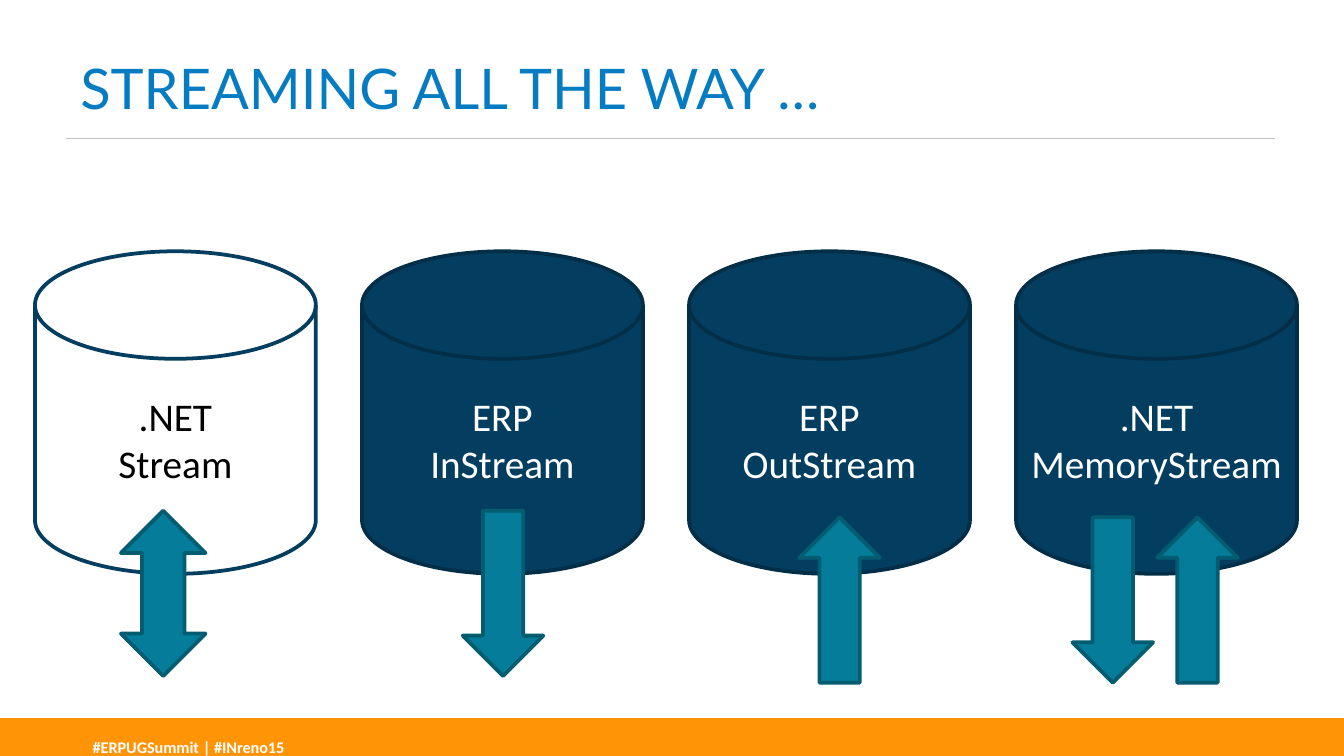
from pptx import Presentation
from pptx.dml.color import RGBColor
from pptx.enum.shapes import MSO_CONNECTOR, MSO_SHAPE as Shape
from pptx.enum.text import MSO_ANCHOR as Anchor, PP_ALIGN as Align
from pptx.oxml.ns import qn
from pptx.util import Inches, Pt
from lxml.etree import SubElement

WIDTH = 10
HEIGHT = WIDTH * 9 / 16
FIRST_LEFT, LAST_LEFT = 0.26, 7.56
DISK_TOP, DISK_WIDTH, DISK_HEIGHT = 1.87, 2.09, 2.4
ARROW_WIDTH, ARROW_HEIGHT = 0.6, 1.23
HIGH_ROW, LOW_ROW = 3.8, 3.85
NAVY, WHITE = "033E60", "FFFFFF"

DISKS = [
    ((".NET", "Stream"), WHITE, NAVY, "000000"),
    (("ERP", "InStream"), NAVY, "022E47", WHITE),
    (("ERP", "OutStream"), NAVY, "022E47", WHITE),
    ((".NET", "MemoryStream"), NAVY, "022E47", WHITE),
]
ARROWS = [
    (0, 0.64, HIGH_ROW, Shape.UP_DOWN_ARROW, 0.63, 0),
    (1, 0.75, HIGH_ROW, Shape.DOWN_ARROW, ARROW_WIDTH, 0),
    (2, 0.82, LOW_ROW, Shape.DOWN_ARROW, ARROW_WIDTH, 180),
    (3, 0.42, LOW_ROW, Shape.DOWN_ARROW, ARROW_WIDTH, 0),
    (3, 1.05, LOW_ROW, Shape.DOWN_ARROW, ARROW_WIDTH, 180),
]


def color(value):
    return RGBColor.from_string(value)


def box(*lengths):
    return [Inches(length) for length in lengths]


def column_left(column):
    return FIRST_LEFT + column * (LAST_LEFT - FIRST_LEFT) / (len(DISKS) - 1)


def write(frame, lines, face, size, ink, align=Align.LEFT, bold=False):
    frame.word_wrap = True
    frame.vertical_anchor = Anchor.MIDDLE
    frame.text = "\n".join(lines)
    for paragraph in frame.paragraphs:
        paragraph.alignment = align
        font = paragraph.font
        font.name, font.size, font.bold = face, Pt(size), bold
        font.color.rgb = color(ink)


def add_filled(slide, kind, place, fill, outline=None):
    shape = slide.shapes.add_shape(kind, *box(*place))
    shape.shadow.inherit = False
    shape.fill.solid()
    shape.fill.fore_color.rgb = color(fill)
    if outline:
        shape.line.color.rgb = color(outline)
        shape.line.width = Pt(2)
    else:
        shape.line.fill.background()
    return shape


def add_rule(slide, left, right, top):
    rule = slide.shapes.add_connector(MSO_CONNECTOR.STRAIGHT, *box(left, top, right, top))
    rule.line.color.rgb = color("BFBFBF")
    rule.line.width = Pt(0.5)
    SubElement(rule._element.spPr, qn("a:effectLst"))


def add_title(slide, wording):
    title = slide.shapes.add_textbox(*box(0.5, 0.18, 9, 0.94))
    write(title.text_frame, [wording], "Lato", 30, "057CC1")


def add_footer(slide, wording):
    add_filled(slide, Shape.RECTANGLE, (0, 0.95 * HEIGHT, WIDTH, 0.3), "FF9407")
    hashtags = slide.shapes.add_textbox(*box(0.56, 5.41, 2.42, 0.27))
    frame = hashtags.text_frame
    write(frame, [wording], "Calibri", 15, WHITE, bold=True)
    frame.vertical_anchor = Anchor.TOP
    frame.margin_left = Inches(0.13)
    frame.paragraphs[0].runs[0].font._element.set("baseline", "30000")


def add_disk(slide, column, lines, fill, outline, ink):
    place = column_left(column), DISK_TOP, DISK_WIDTH, DISK_HEIGHT
    disk = add_filled(slide, Shape.FLOWCHART_MAGNETIC_DISK, place, fill, outline)
    write(disk.text_frame, lines, "Calibri", 21, ink, Align.CENTER)


def add_arrow(slide, column, offset, top, kind, width, turn):
    place = column_left(column) + offset, top, width, ARROW_HEIGHT
    arrow = add_filled(slide, kind, place, "057C99", "045C71")
    arrow.rotation = turn


def main():
    deck = Presentation()
    deck.slide_width, deck.slide_height = box(WIDTH, HEIGHT)
    slide = deck.slides.add_slide(deck.slide_layouts[6])
    add_rule(slide, 0.49, 9.49, 1.03)
    add_footer(slide, "#ERPUGSummit | #INreno15")
    add_title(slide, "STREAMING ALL THE WAY …")
    for column, disk in enumerate(DISKS):
        add_disk(slide, column, *disk)
    for arrow in ARROWS:
        add_arrow(slide, *arrow)
    deck.save("out.pptx")


if __name__ == "__main__":
    main()
